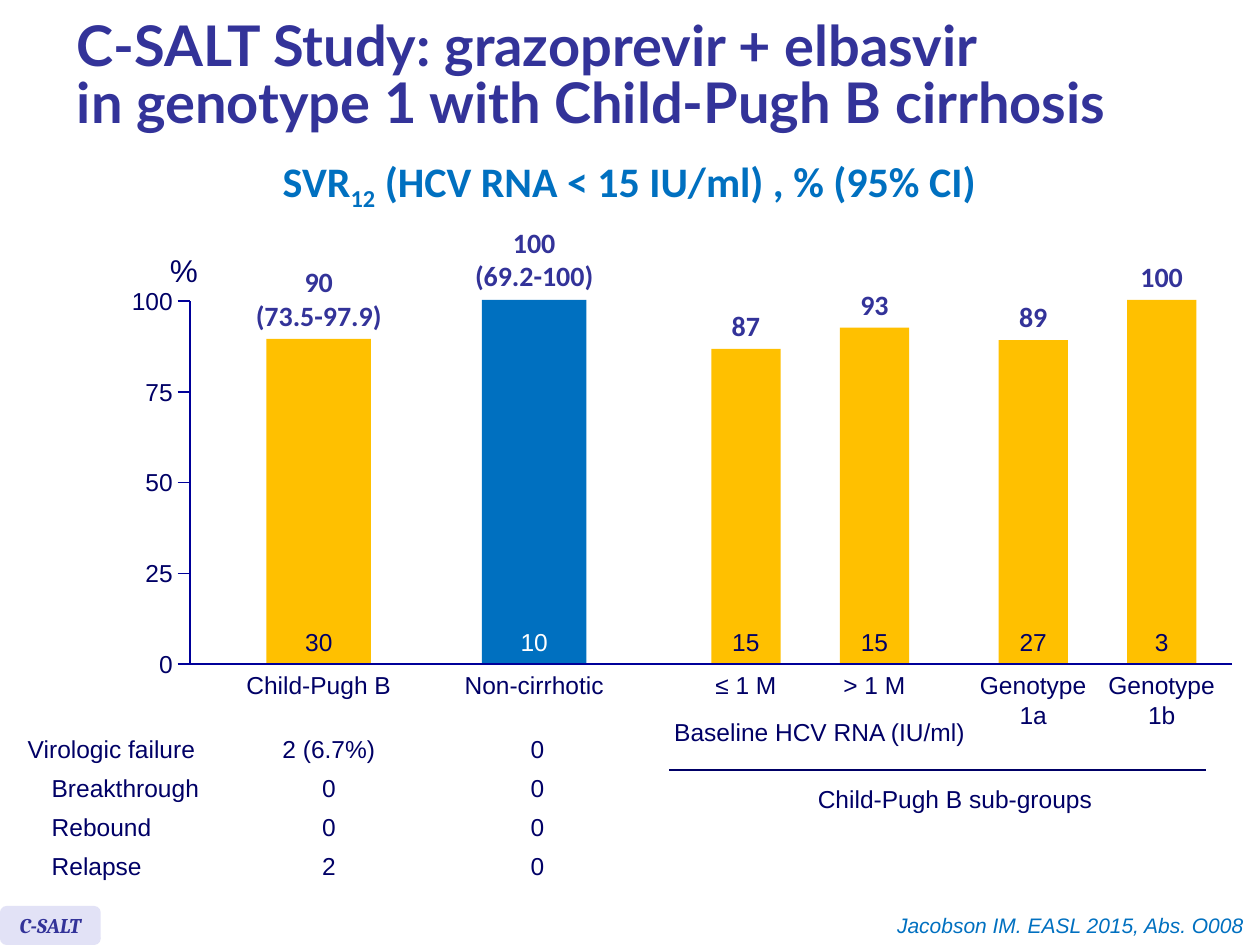
from pptx import Presentation
from pptx.dml.color import RGBColor
from pptx.enum.shapes import MSO_CONNECTOR, MSO_SHAPE
from pptx.enum.text import MSO_ANCHOR, MSO_AUTO_SIZE, PP_ALIGN
from pptx.oxml.ns import qn
from pptx.util import Inches, Pt
from lxml import etree

LEFT, MID, RIGHT = PP_ALIGN.LEFT, PP_ALIGN.CENTER, PP_ALIGN.RIGHT
MIDDLE = MSO_ANCHOR.MIDDLE
GROW = MSO_AUTO_SIZE.SHAPE_TO_FIT_TEXT
RECT, ROUND = MSO_SHAPE.RECTANGLE, MSO_SHAPE.ROUNDED_RECTANGLE
LINE = MSO_CONNECTOR.STRAIGHT

NAVY, INDIGO, BLUE = "000066", "333399", "0070C0"
GOLD, AXIS, PALE, WHITE = "FFC000", "000099", "E2E2F6", "FFFFFF"

# Bar centre, width, height, colour, value label, patients, group name
BARS = [
    (2.53, 0.83, 2.58, GOLD, "90\n(73.5-97.9)", "30", "Child-Pugh B"),
    (4.24, 0.83, 2.89, BLUE, "100\n(69.2-100)", "10", "Non-cirrhotic"),
    (5.92, 0.55, 2.5, GOLD, "87", "15", "≤ 1 M"),
    (6.94, 0.55, 2.67, GOLD, "93", "15", "> 1 M"),
    (8.2, 0.55, 2.57, GOLD, "89", "27", "Genotype\n1a"),
    (9.22, 0.55, 2.89, GOLD, "100", "3", "Genotype\n1b"),
]
FAILS = [
    ("Virologic failure", "2 (6.7%)", "0"),
    ("Breakthrough", "0", "0"),
    ("Rebound", "0", "0"),
    ("Relapse", "2", "0"),
]


def color(code):
    return RGBColor.from_string(code)


def add_run(para, text, size=14, face="Arial", ink=NAVY, bold=False, italic=False):
    run = para.add_run()
    run.text = text
    font = run.font
    font.size, font.name = Pt(size), face
    font.bold, font.italic = bold, italic
    font.color.rgb = color(ink)
    return run


def write(para, text, align=MID, **style):
    """Write text into a paragraph, with a line break at each newline."""
    para.alignment = align
    for i, line in enumerate(text.split("\n")):
        if i:
            para.add_line_break()
        add_run(para, line, **style)


def add_box(slide, x, y, w, h):
    frame = slide.shapes.add_textbox(Inches(x), Inches(y), Inches(w), Inches(h)).text_frame
    frame.word_wrap = False
    frame.auto_size = GROW
    return frame


def add_label(slide, text, x, y, w, h=0.34, align=MID, **style):
    write(add_box(slide, x, y, w, h).paragraphs[0], text, align, **style)


def add_block(slide, kind, x, y, w, h, fill):
    block = slide.shapes.add_shape(kind, Inches(x), Inches(y), Inches(w), Inches(h))
    block.shadow.inherit = False
    block.fill.solid()
    block.fill.fore_color.rgb = color(fill)
    block.line.fill.background()
    return block


def add_line(slide, x1, y1, x2, y2, ink, width):
    line = slide.shapes.add_connector(LINE, Inches(x1), Inches(y1), Inches(x2), Inches(y2))
    line.line.color.rgb = color(ink)
    line.line.width = Pt(width)
    etree.SubElement(line._element.spPr, qn("a:effectLst"))


def add_title(slide, x, y, w, h):
    title = slide.shapes.title
    title.left, title.top, title.width, title.height = map(Inches, (x, y, w, h))
    title.text_frame.vertical_anchor = MIDDLE
    para = title.text_frame.paragraphs[0]
    para.line_spacing = 0.85
    write(para, "C-SALT Study: grazoprevir + elbasvir\n"
          "in genotype 1 with Child-Pugh B cirrhosis",
          LEFT, size=32, face="Lato", ink=INDIGO, bold=True)


def add_head(slide, x, y, w, h):
    para = add_box(slide, x, y, w, h).paragraphs[0]
    para.alignment = MID
    para.line_spacing = Pt(23.6)
    style = dict(size=24, face="Calibri", ink=BLUE, bold=True)
    add_run(para, "SVR", **style)
    sub = add_run(para, "12", **style)
    sub._r.get_or_add_rPr().set("baseline", "-25000")
    add_run(para, " (HCV RNA < 15 IU/ml) , % (95% CI)", **style)


def add_axes(slide, x, y, w, h):
    base = y + h
    pen = slide.shapes.build_freeform(Inches(x + w), Inches(base))
    pen.add_line_segments([(Inches(x), Inches(base)), (Inches(x), Inches(y))], close=False)
    axes = pen.convert_to_shape()
    axes.shadow.inherit = False
    axes.fill.background()
    axes.line.color.rgb = color(AXIS)
    axes.line.width = Pt(0.88)

    # Ticks and their labels
    for i in range(5):
        mark = base - i * h / 4
        add_line(slide, x - 0.1, mark, x, mark, AXIS, 0.88)
        add_label(slide, str(25 * i), x - 0.57, mark - 0.17, 0.53, align=RIGHT)
    add_label(slide, "%", x - 0.26, y - 0.45, 0.42, 0.35, LEFT, size=18)


def add_bars(slide, base):
    for mid, wide, high, fill, value, count, name in BARS:
        top = base - high
        add_block(slide, RECT, mid - wide / 2, top, wide, high, fill)
        tall = 0.64 if "\n" in value else 0.37
        add_label(slide, value, mid - 0.6, top - tall, 1.2, tall,
                  size=16, face="Calibri", ink=INDIGO, bold=True)
        add_label(slide, count, mid - 0.21, base - 0.34, 0.42,
                  ink=WHITE if fill == BLUE else NAVY)
        add_label(slide, name, mid - 0.68, base, 1.36, 0.57 if "\n" in name else 0.34)


def add_groups(slide, x, y, w):
    add_label(slide, "Baseline HCV RNA (IU/ml)", x - 0.07, y - 0.47, 2.53)
    add_line(slide, x, y, x + w, y, NAVY, 1.5)
    add_label(slide, "Child-Pugh B sub-groups", x + 1.07, y + 0.06, 2.4)


def add_fails(slide, x, y, w, h):
    table = slide.shapes.add_table(len(FAILS), 3, Inches(x), Inches(y), Inches(w), Inches(h)).table
    table.first_row = table.horz_banding = False
    for col, wide in zip(table.columns, (1.73, 1.52, 1.79)):
        col.width = Inches(wide)
    for r, row in enumerate(FAILS):
        for c, text in enumerate(row):
            cell = table.cell(r, c)
            cell.fill.background()
            cell.vertical_anchor = MIDDLE
            if r and not c:
                cell.margin_left = Inches(0.29)
            para = cell.text_frame.paragraphs[0]
            para.line_spacing = Pt(15)
            write(para, text, MID if c else LEFT)


def add_foot(slide, y):
    badge = add_block(slide, ROUND, 0, y, 0.8, 0.31, PALE)
    frame = badge.text_frame
    frame.word_wrap = False
    frame.vertical_anchor = MIDDLE
    write(frame.paragraphs[0], "C-SALT", size=12, face="Cambria",
          ink=INDIGO, bold=True, italic=True)
    add_label(slide, "Jacobson IM. EASL 2015, Abs. O008", 6.95, y, 3.02, 0.3,
              RIGHT, size=12, ink=BLUE, italic=True)


def main():
    deck = Presentation()
    deck.slide_width, deck.slide_height = Inches(10), Inches(7.5)
    slide = deck.slides.add_slide(deck.slide_layouts[5])
    add_title(slide, 0.51, 0.08, 9.13, 1.07)
    add_head(slide, 2.1, 1.31, 5.79, 0.44)
    add_bars(slide, 5.27)
    add_axes(slide, 1.51, 2.39, 8.27, 2.88)
    add_groups(slide, 5.31, 6.11, 4.26)
    add_fails(slide, 0.12, 5.8, 5.04, 1.24)
    add_foot(slide, 7.19)
    deck.save("out.pptx")


if __name__ == "__main__":
    main()
